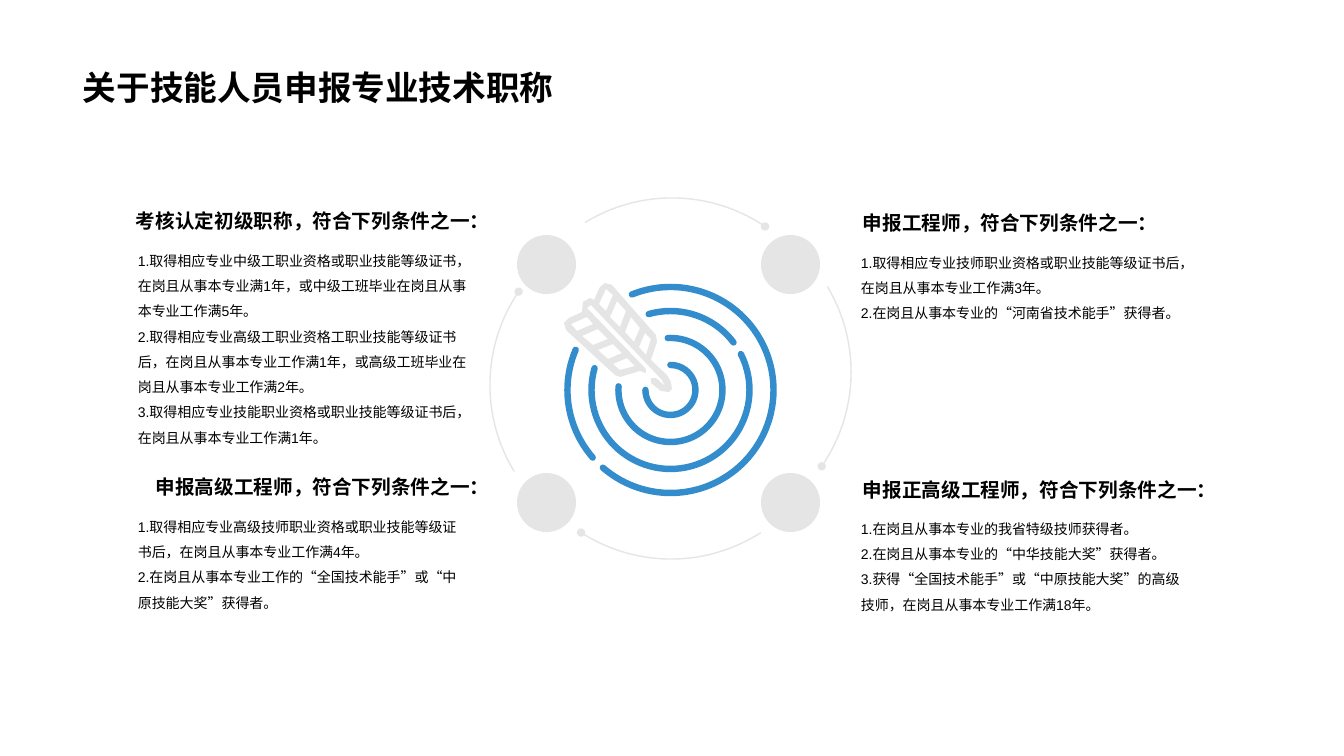
import pptx
import pptx.dml.color
import pptx.enum.shapes
import pptx.enum.text
import pptx.oxml.ns
import pptx.util
from lxml import etree

BLACK = pptx.dml.color.RGBColor(0x00, 0x00, 0x00)
GREY = pptx.dml.color.RGBColor(0x80, 0x80, 0x80)
BLUE = pptx.dml.color.RGBColor(0x33, 0x8D, 0xCD)
FONT = "Arial"
LEFT = pptx.enum.text.PP_ALIGN.LEFT
RIGHT = pptx.enum.text.PP_ALIGN.RIGHT
SHAPE = pptx.enum.shapes.MSO_SHAPE

# Title, dial and text blocks: boxes are left, top, width, height in px
TITLE_BOX = (73, 0, 1198, 113)
DIAL_BOX = (490, 197, 361, 362)
BLOCKS = [
    ("考核认定初级职称，符合下列条件之一：", RIGHT, (119, 192, 361, 45), (128, 239, 352, 211), [
        "1.取得相应专业中级工职业资格或职业技能等级证书，在岗且从事本专业满1年，或中级工班毕业在岗且从事本专业工作满5年。",
        "2.取得相应专业高级工职业资格工职业技能等级证书后，在岗且从事本专业工作满1年，或高级工班毕业在岗且从事本专业工作满2年。",
        "3.取得相应专业技能职业资格或职业技能等级证书后，在岗且从事本专业工作满1年。"]),
    ("申报高级工程师，符合下列条件之一：", RIGHT, (128, 458, 352, 41), (128, 505, 352, 109), [
        "1.取得相应专业高级技师职业资格或职业技能等级证书后，在岗且从事本专业工作满4年。",
        "2.在岗且从事本专业工作的“全国技术能手”或“中原技能大奖”获得者。"]),
    ("申报工程师，符合下列条件之一：", LEFT, (853, 194, 352, 41), (851, 241, 352, 87), [
        "1.取得相应专业技师职业资格或职业技能等级证书后，在岗且从事本专业工作满3年。",
        "2.在岗且从事本专业的“河南省技术能手”获得者。"]),
    ("申报正高级工程师，符合下列条件之一：", LEFT, (853, 461, 360, 45), (851, 507, 352, 112), [
        "1.在岗且从事本专业的我省特级技师获得者。",
        "2.在岗且从事本专业的“中华技能大奖”获得者。",
        "3.获得“全国技术能手”或“中原技能大奖”的高级技师，在岗且从事本专业工作满18年。"]),
]

# Outer arcs: left and top within the dial, rotation in degrees
ORBIT_SIZE = 332
ORBIT_START, ORBIT_END = 177.7, 243.3
ORBITS = [(16, 1, 60.8), (29, 9, 151.3), (15, 30, 239.5), (0, 22, 330.9)]

# Target bands: radius, start and end angle, clockwise from east
BANDS = [(103, 248, 131), (103, 139, 203), (79, 333, 196),
         (79, 254, 323), (52, 267, 184), (25, 270, 180)]

# Dart: outline first, then the gaps between its feathers
DART = [
    [(93, 60), (87, 78), (103, 93), (107, 100), (108, 107), (105, 110), (97, 109),
     (87, 101), (87, 96), (92, 96), (101, 104), (98, 98), (27, 23), (23, 26),
     (82, 87), (82, 91), (76, 89), (56, 95), (51, 93), (2, 48), (0, 41), (5, 36),
     (18, 30), (19, 20), (26, 16), (30, 18), (36, 5), (41, 1), (48, 3), (92, 53)],
    [(29, 63), (44, 57), (34, 47), (18, 54)],
    [(44, 77), (58, 71), (49, 62), (34, 68)],
    [(56, 88), (71, 84), (63, 76), (49, 82)],
    [(7, 42), (13, 49), (29, 42), (23, 35)],
    [(67, 35), (61, 50), (70, 60), (76, 46)],
    [(53, 19), (46, 35), (56, 45), (62, 29)],
    [(42, 7), (35, 22), (42, 29), (49, 13)],
    [(87, 57), (81, 51), (75, 65), (82, 73)],
]


def px(length):
    return pptx.util.Emu(round(length * 914400 / 100.8))


def fade(shape):
    """Make the colours of a shape 20 % opaque."""
    for color in shape.element.spPr.iter(pptx.oxml.ns.qn("a:srgbClr")):
        etree.SubElement(color, pptx.oxml.ns.qn("a:alpha"), val="20000")


def paint_faded(shape):
    shape.shadow.inherit = False
    shape.line.fill.background()
    shape.fill.solid()
    shape.fill.fore_color.rgb = GREY
    fade(shape)


def add_text(page, box, lines, size, bold=False, align=LEFT, spacing=1.5):
    text_box = page.shapes.add_textbox(*map(px, box))
    frame = text_box.text_frame
    frame.word_wrap = True
    frame.text = "\n".join(lines)
    for para in frame.paragraphs:
        para.alignment = align
        para.line_spacing = spacing
        para.font.name = FONT
        para.font.size = pptx.util.Pt(size)
        para.font.bold = bold
        para.font.color.rgb = BLACK
    return frame


def add_title(page, box):
    frame = add_text(page, box, ["关于技能人员申报专业技术职称"], 24, bold=True, spacing=0.9)
    frame.vertical_anchor = pptx.enum.text.MSO_ANCHOR.BOTTOM


def add_block(page, heading, align, heading_box, body_box, conditions):
    add_text(page, heading_box, [heading], 14, bold=True, align=align)
    add_text(page, body_box, conditions, 10)


def add_arc(page, left, top, size, start, end, color, points):
    arc = page.shapes.add_shape(SHAPE.ARC, *map(px, (left, top, size, size)))
    # Angles are stored in 60000ths of a degree, adjustments in 100000ths
    arc.adjustments[0] = start * 0.6
    arc.adjustments[1] = end * 0.6
    arc.shadow.inherit = False
    arc.fill.background()
    arc.line.width = pptx.util.Pt(points)
    arc.line.color.rgb = color
    return arc


def add_orbit(page, left, top, rotation):
    orbit = add_arc(page, left, top, ORBIT_SIZE, ORBIT_START, ORBIT_END, GREY, 1)
    orbit.rotation = rotation
    fade(orbit)
    line = orbit.element.spPr.get_or_add_ln()
    etree.SubElement(line, pptx.oxml.ns.qn("a:tailEnd"), type="oval")


def add_band(page, center, radius, start, end):
    """Draw a ring segment with round ends."""
    x, y = center
    band = add_arc(page, x - radius, y - radius, 2 * radius, start, end, BLUE, 4.6)
    band.element.spPr.get_or_add_ln().set("cap", "rnd")


def add_dart(page, left, top):
    contours = [[(px(left + x), px(top + y)) for x, y in contour] for contour in DART]
    builder = page.shapes.build_freeform(*contours[0][0])
    for contour in contours:
        builder.move_to(*contour[0])
        builder.add_line_segments(contour[1:], close=True)
    paint_faded(builder.convert_to_shape())


def add_dial(page, box):
    left, top, width, height = box
    # Corner discs
    for column in range(2):
        for row in range(2):
            corner = (left + 27 + 244 * column, top + 38 + 238 * row)
            disc = page.shapes.add_shape(SHAPE.OVAL, *map(px, (*corner, 59, 59)))
            paint_faded(disc)
    # Outer arcs
    for orbit_left, orbit_top, rotation in ORBITS:
        add_orbit(page, left + orbit_left, top + orbit_top, rotation)
    # Target and dart
    center = (left + width / 2, top + height / 2 + 12)
    for radius, start, end in BANDS:
        add_band(page, center, radius, start, end)
    add_dart(page, left + 74, top + 85)


def main():
    deck = pptx.Presentation()
    deck.slide_width, deck.slide_height = px(1344), px(756)
    page = deck.slides.add_slide(deck.slide_layouts[6])
    add_title(page, TITLE_BOX)
    for block in BLOCKS:
        add_block(page, *block)
    add_dial(page, DIAL_BOX)
    deck.save("out.pptx")


if __name__ == "__main__":
    main()
